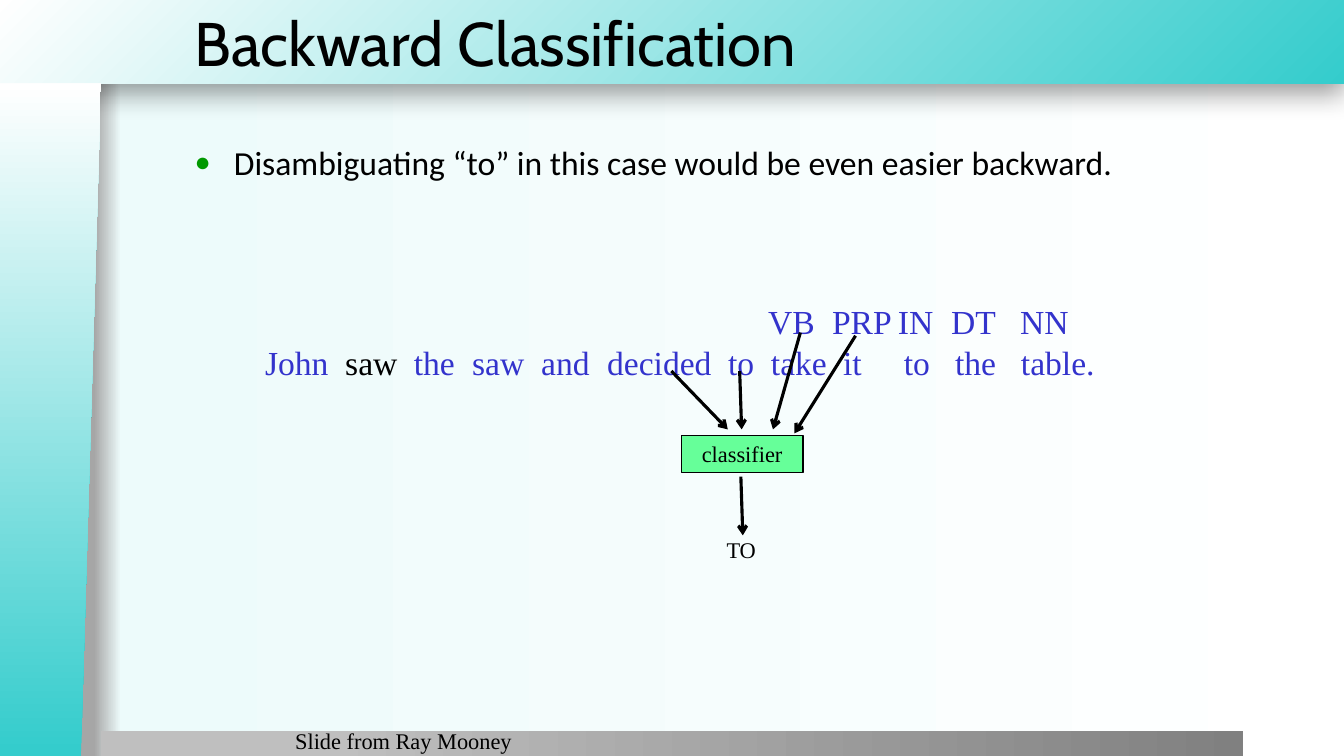
from dataclasses import dataclass

import pptx
import pptx.dml.color
import pptx.enum.shapes
import pptx.enum.text
import pptx.oxml
import pptx.oxml.ns
import pptx.util

Cm = pptx.util.Cm
Pt = pptx.util.Pt
Kind = pptx.enum.shapes.MSO_SHAPE
Align = pptx.enum.text.PP_ALIGN
Anchor = pptx.enum.text.MSO_ANCHOR
qn = pptx.oxml.ns.qn

BLACK = "000000"
BLUE = "3333CC"
TEAL = "34CCCC"
WHITE = "FFFFFF"
SERIF = "Times New Roman"


@dataclass
class Box:
    left: float
    top: float
    width: float
    height: float

    def place(self) -> tuple:
        return Cm(self.left), Cm(self.top), Cm(self.width), Cm(self.height)


@dataclass
class Panel:
    kind: int
    box: Box
    stops: list
    shade: str
    turn: int = 0


@dataclass
class Arrow:
    x1: float
    y1: float
    x2: float
    y2: float


@dataclass
class Label:
    text: str
    box: Box
    align: int


@dataclass
class Row:
    words: list
    tabs: list


LINEAR = '<a:lin ang="0" scaled="0"/>'
CORNER = '<a:path path="circle"><a:fillToRect l="100000" t="100000"/></a:path>'

PANELS = [
    Panel(Kind.RECTANGLE, Box(-0.02, 0, 33.88, 2.11), [(0, TEAL), (100, WHITE)], CORNER),
    Panel(Kind.RECTANGLE, Box(2.54, 18.42, 28.78, 0.66), [(20, "BFBFBF"), (100, "808080")], LINEAR),
    Panel(Kind.FLOWCHART_MANUAL_INPUT, Box(-7.21, 9.32, 16.97, 2.54),
          [(1, TEAL), (100, WHITE)], LINEAR, 270),
]
ARROWS = [
    Arrow(16.92, 9.35, 18.34, 10.82),
    Arrow(20.17, 8.38, 19.48, 10.82),
    Arrow(18.64, 9.35, 18.69, 10.82),
    Arrow(18.67, 12.01, 18.72, 13.49),
    Arrow(21.56, 8.46, 20.02, 10.92),
]
LABELS = [
    Label("TO", Box(17.7, 13.39, 1.96, 0.94), Align.CENTER),
    Label("Slide from Ray Mooney", Box(7.19, 18.21, 8.69, 0.64), Align.LEFT),
]
ROWS = [
    Row(["", "VB", "PRP", "IN", "DT", "NN"], [12.68, 14.29, 15.95, 17.29, 19.03]),
    Row(["John", "saw", "the", "saw", "and", "decided", "to", "take", "it", "to", "the", "table."],
        [2.02, 3.75, 5.22, 6.96, 8.62, 11.67, 12.75, 14.57, 16.1, 17.39, 19.05]),
]


def node(text: str):
    head, rest = text.split(">", 1) if not text.endswith("/>") or text.count("<") > 1 else (text[:-2], None)
    space = ' xmlns:a="http://schemas.openxmlformats.org/drawingml/2006/main"'
    return pptx.oxml.parse_xml(head + space + ("/>" if rest is None else ">" + rest))


def paint(target, hue: str) -> None:
    target.rgb = pptx.dml.color.RGBColor.from_string(hue)


def blend(root, stops: list, shade: str) -> None:
    marks = "".join(f'<a:gs pos="{at * 1000}"><a:srgbClr val="{hue}"/></a:gs>' for at, hue in stops)
    old = next(root.iter(qn("a:gradFill")))
    new = node(f'<a:gradFill rotWithShape="1"><a:gsLst>{marks}</a:gsLst>{shade}</a:gradFill>')
    old.getparent().replace(old, new)


def style(para, face: str, size: float, hue: str = BLACK, align: int = Align.LEFT) -> None:
    para.alignment = align
    para.font.name = face
    para.font.size = Pt(size)
    paint(para.font.color, hue)


def move(shape, box: Box) -> None:
    shape.left, shape.top, shape.width, shape.height = box.place()


def draw_panel(slide, panel: Panel):
    shape = slide.shapes.add_shape(panel.kind, *panel.box.place())
    shape.shadow.inherit = False
    shape.line.fill.background()
    shape.fill.gradient()
    blend(shape.element, panel.stops, panel.shade)
    if panel.turn:
        shape.rotation = panel.turn
        shape.element.spPr.find(qn("a:xfrm")).set("flipV", "1")
    return shape


def draw_arrow(slide, arrow: Arrow) -> None:
    line = slide.shapes.add_connector(
        pptx.enum.shapes.MSO_CONNECTOR.STRAIGHT,
        Cm(arrow.x1), Cm(arrow.y1), Cm(arrow.x2), Cm(arrow.y2))
    line.line.width = Pt(2.25)
    line.line.fill.solid()
    paint(line.line.color, BLACK)
    line.line.fill
    spot = line.element.spPr
    spot.find(qn("a:ln")).append(node('<a:tailEnd type="arrow"/>'))
    spot.append(node("<a:effectLst/>"))


def draw_label(slide, label: Label) -> None:
    frame = slide.shapes.add_textbox(*label.box.place()).text_frame
    frame.word_wrap = True
    frame.text = label.text
    style(frame.paragraphs[0], SERIF, 16, align=label.align)


def draw_rows(slide, box: Box, rows: list) -> None:
    frame = slide.shapes.add_textbox(*box.place()).text_frame
    frame.word_wrap = True
    for n, row in enumerate(rows):
        para = frame.paragraphs[0] if n == 0 else frame.add_paragraph()
        stops = "".join(f'<a:tab pos="{Cm(at)}" algn="l"/>' for at in row.tabs)
        para._p.get_or_add_pPr().append(node(f"<a:tabLst>{stops}</a:tabLst>"))
        style(para, SERIF, 24, BLUE)
        for k, word in enumerate(row.words):
            run = para.add_run()
            run.text = word if k == 0 else "\t" + word
            if k == 1 and word == "saw":
                paint(run.font.color, BLACK)


def main() -> None:
    deck = pptx.Presentation()
    deck.slide_width, deck.slide_height = Cm(33.87), Cm(19.05)
    slide = deck.slides.add_slide(deck.slide_layouts[1])
    slide.background.fill.gradient()
    blend(slide.element, [(7, "A6A6A6"), (9, "EDFBFB"), (100, WHITE)], LINEAR)

    title, body = slide.placeholders
    move(title, Box(4.65, 0, 29.24, 2.11))
    title.text_frame.text = "Backward Classification"
    title.text_frame.vertical_anchor = Anchor.MIDDLE
    style(title.text_frame.paragraphs[0], "Cabin", 44)

    move(body, Box(4.65, 3.45, 26.67, 14.71))
    body.text_frame.text = "Disambiguating “to” in this case would be even easier backward."
    para = body.text_frame.paragraphs[0]
    props = para._p.get_or_add_pPr()
    props.set("marL", str(Cm(0.99)))
    props.set("indent", str(Cm(-0.99)))
    for mark in ('<a:buClr><a:srgbClr val="009900"/></a:buClr>',
                 '<a:buSzPct val="80000"/>', '<a:buChar char="●"/>'):
        props.append(node(mark))
    style(para, "Calibri", 24)
    for frame in (title.text_frame, body.text_frame):
        frame.auto_size = pptx.enum.text.MSO_AUTO_SIZE.NONE

    panels = [draw_panel(slide, panel) for panel in PANELS]
    for n, shape in enumerate(panels):
        slide.shapes.element.insert(2 + n, shape.element)
    glow = panels[0].element.spPr.find(qn("a:effectLst"))
    glow.append(node(f'<a:outerShdw blurRad="{Pt(20)}" dist="{Pt(6)}" dir="5400000">'
                     '<a:srgbClr val="000000"><a:alpha val="40000"/></a:srgbClr></a:outerShdw>'))

    draw_rows(slide, Box(6.43, 7.47, 21.62, 2.31), ROWS)
    core = slide.shapes.add_shape(Kind.RECTANGLE, *Box(17.17, 10.97, 3.07, 0.94).place())
    core.shadow.inherit = False
    core.fill.solid()
    paint(core.fill.fore_color, "66FF99")
    paint(core.line.color, BLACK)
    core.line.width = Pt(1)
    core.text_frame.text = "classifier"
    style(core.text_frame.paragraphs[0], SERIF, 16, align=Align.CENTER)
    for arrow in ARROWS:
        draw_arrow(slide, arrow)
    for label in LABELS:
        draw_label(slide, label)
    deck.save("out.pptx")


if __name__ == "__main__":
    main()
